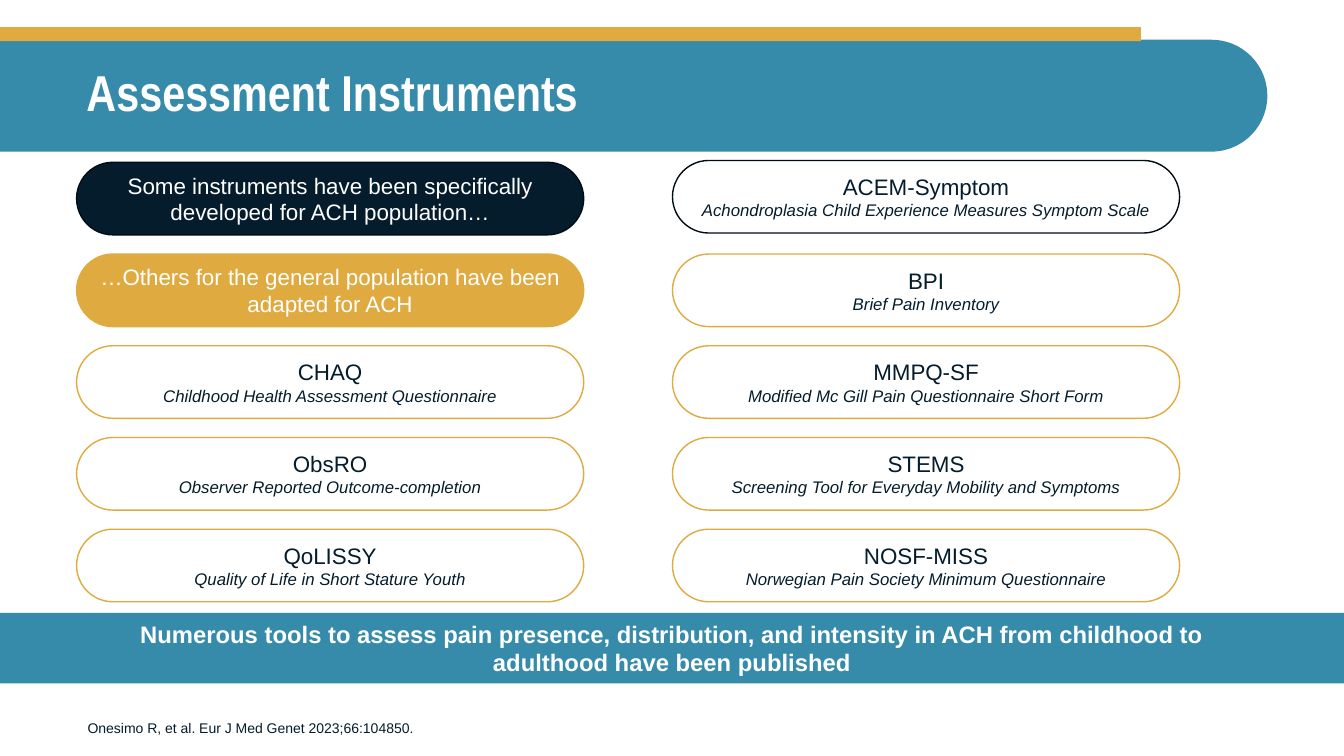
from pptx import Presentation
from pptx import util as u
from pptx.dml.color import RGBColor
from pptx.enum import shapes, text

COLORS = {"teal": "368BAB", "gold": "DFAA40", "navy": "051C2C",
          "black": "020C13", "white": "FFFFFF"}
KINDS = shapes.MSO_SHAPE
HEADING = {"size": u.Pt(16)}
SUBTITLE = {"size": u.Pt(12), "italic": True}


class InstrumentSlide:
    """Holds the style and the slide, and draws each kind of element."""
    WIDTH, HEIGHT = 13.33, 7.5
    GRID_LEFT, GRID_TOP = 0.76, 1.61
    COLUMN_STEP, ROW_STEP = 5.91, 0.91
    PILL_WIDTH, PILL_HEIGHT = 5.03, 0.72

    def __init__(self):
        self.presentation = Presentation()
        self.presentation.slide_width = u.Inches(self.WIDTH)
        self.presentation.slide_height = u.Inches(self.HEIGHT)
        self.slide = self.presentation.slides.add_slide(self.presentation.slide_layouts[6])

    def color(self, name):
        return RGBColor.from_string(COLORS[name])

    def fill_text(self, shape, lines, color, align="CENTER", anchor="MIDDLE", spacing=None):
        """Each line is a pair: wording and a dict of font values."""
        frame = shape.text_frame
        frame.word_wrap = True
        frame.vertical_anchor = text.MSO_ANCHOR[anchor]
        for index, (wording, formats) in enumerate(lines):
            paragraph = frame.add_paragraph() if index else frame.paragraphs[0]
            paragraph.alignment = text.PP_ALIGN[align]
            paragraph.line_spacing = spacing
            run = paragraph.add_run()
            run.text = wording
            run.font.color.rgb = self.color(color)
            for name, value in {"name": "Arial", **formats}.items():
                setattr(run.font, name, value)

    def shape(self, kind, box, fill, line=None):
        shape = self.slide.shapes.add_shape(kind, *map(u.Inches, box))
        shape.shadow.inherit = False
        shape.fill.solid()
        shape.fill.fore_color.rgb = self.color(fill)
        if line:
            shape.line.color.rgb = self.color(line)
            shape.line.width = u.Pt(1)
        else:
            shape.line.fill.background()
        return shape

    def share(self, left, top, width, height):
        """Turn percentages of the slide's size into inches."""
        return (left * self.WIDTH / 100, top * self.HEIGHT / 100,
                width * self.WIDTH / 100, height * self.HEIGHT / 100)

    def bar(self, box, fill):
        return self.shape(KINDS.RECTANGLE, self.share(*box), fill)

    def banner(self, box, fill):
        """A bar with a round right end: an upright shape turned on its side."""
        left, top, width, height = self.share(*box)
        upright = (left + (width - height) / 2, top + (height - width) / 2, height, width)
        shape = self.shape(KINDS.ROUND_2_SAME_RECTANGLE, upright, fill)
        shape.adjustments[0], shape.adjustments[1] = 0, 0.5
        shape.rotation = 270

    def label(self, box, wording, formats, color, **layout):
        shape = self.slide.shapes.add_textbox(*map(u.Inches, self.share(*box)))
        self.fill_text(shape, [(wording, formats)], color, align="LEFT", **layout)

    def pill(self, column, row, lines, fill="white", line="gold", color="navy"):
        box = (self.GRID_LEFT + column * self.COLUMN_STEP,
               self.GRID_TOP + row * self.ROW_STEP, self.PILL_WIDTH, self.PILL_HEIGHT)
        shape = self.shape(KINDS.ROUNDED_RECTANGLE, box, fill, line)
        shape.adjustments[0] = 0.5
        self.fill_text(shape, lines, color)

    def instrument(self, column, row, short_name, full_name, line="gold"):
        self.pill(column, row, [(short_name, HEADING), (full_name, SUBTITLE)], line=line)


def main():
    page = InstrumentSlide()

    # Header
    page.banner((0, 5.25, 94.3, 14.8), "teal")
    page.bar((0, 3.6, 84.9, 1.85), "gold")
    page.label((5.7, 5.2, 88.6, 14.7), "Assessment Instruments",
               {"name": "Arial Narrow", "size": u.Pt(36), "bold": True},
               "white", spacing=0.9)

    # Source reference
    page.label((5.78, 90.5, 74.1, 7.5),
               "Onesimo R, et al. Eur J Med Genet 2023;66:104850.",
               {"size": u.Pt(10)}, "navy", anchor="BOTTOM")

    # Key message
    message = page.bar((0, 81.07, 100, 9.33), "teal")
    message.text_frame.margin_left = message.text_frame.margin_right = u.Inches(0.79)
    page.fill_text(message, [("Numerous tools to assess pain presence, distribution, and intensity "
                              "in ACH from childhood to adulthood have been published",
                              {"size": u.Pt(17), "bold": True})], "white")

    # Group headings
    page.pill(0, 0, [("Some instruments have been specifically developed for ACH population…",
                      HEADING)], "navy", "black", "white")
    page.pill(0, 1, [("…Others for the general population have been adapted for ACH",
                      HEADING)], "gold", "gold", "white")

    # Instrument developed for ACH, set slightly above its row
    page.instrument(1, -0.02, "ACEM-Symptom",
                    "Achondroplasia Child Experience Measures Symptom Scale", "black")

    # Adapted instruments: first row of each column, then its entries
    columns = [
        (2, [("CHAQ", "Childhood Health Assessment Questionnaire"),
             ("ObsRO", "Observer Reported Outcome-completion"),
             ("QoLISSY", "Quality of Life in Short Stature Youth")]),
        (1, [("BPI", "Brief Pain Inventory"),
             ("MMPQ-SF", "Modified Mc Gill Pain Questionnaire Short Form"),
             ("STEMS", "Screening Tool for Everyday Mobility and Symptoms"),
             ("NOSF-MISS", "Norwegian Pain Society Minimum Questionnaire")]),
    ]
    for column, (first_row, instruments) in enumerate(columns):
        for row, names in enumerate(instruments, first_row):
            page.instrument(column, row, *names)

    page.presentation.save("out.pptx")


if __name__ == "__main__":
    main()
